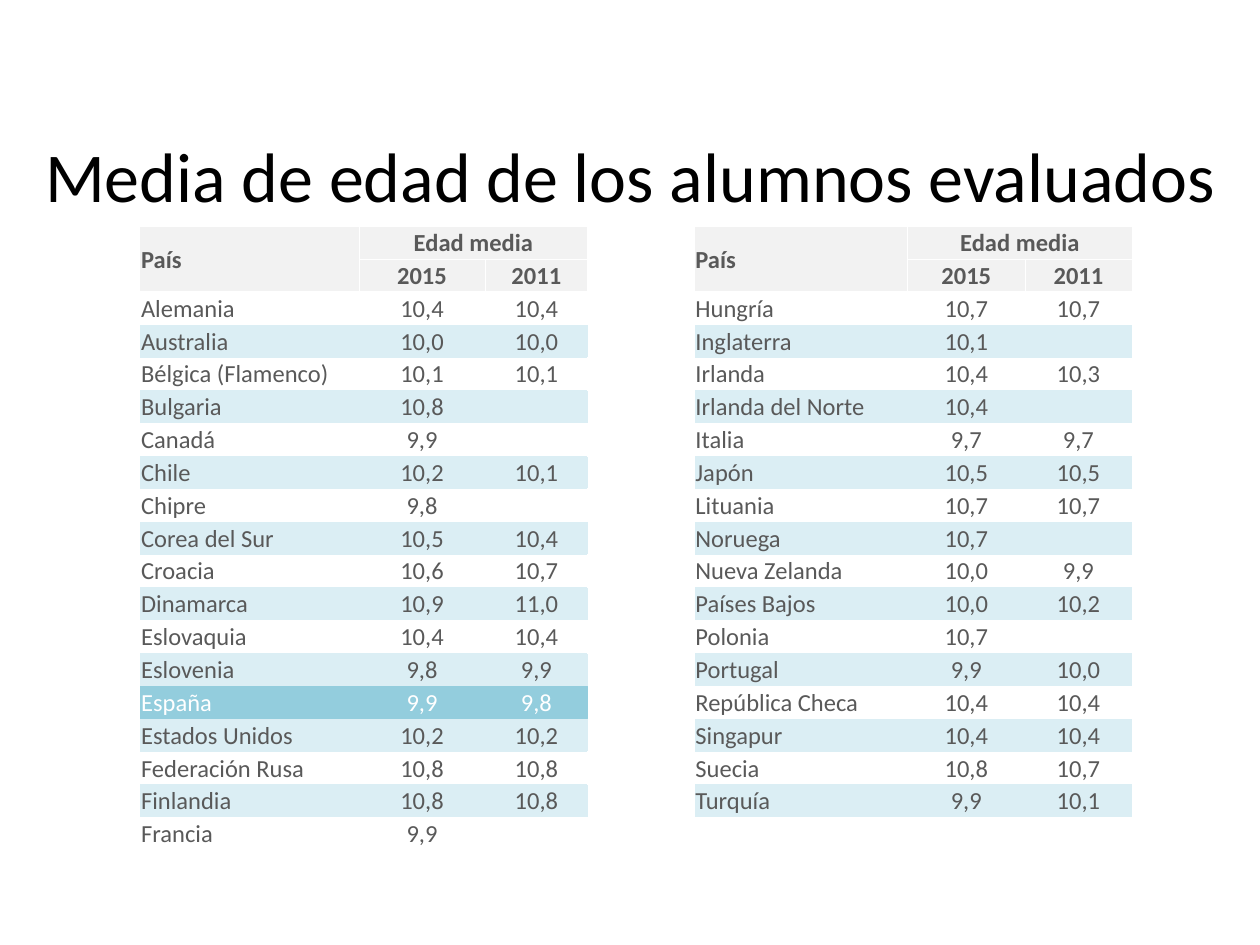
from dataclasses import dataclass
from itertools import zip_longest

from lxml.etree import SubElement
from pptx import Presentation
from pptx.dml.color import RGBColor
from pptx.enum.text import MSO_ANCHOR, PP_ALIGN
from pptx.oxml.ns import qn
from pptx.util import Inches, Pt


@dataclass(frozen=True)
class Theme:
    font: str = "Calibri"
    title_size: int = 40
    cell_size: int = 14
    black: str = "000000"
    gray: str = "595959"
    white: str = "FFFFFF"
    header: str = "F2F2F2"
    band: str = "DBEEF4"
    highlight: str = "93CDDD"
    border: float = 0.5
    plain_style: str = "{2D5ABB26-0587-4C30-8999-92F81FD0307C}"


LEFT = [
    ("Alemania", "10,4", "10,4"),
    ("Australia", "10,0", "10,0"),
    ("Bélgica (Flamenco)", "10,1", "10,1"),
    ("Bulgaria", "10,8", ""),
    ("Canadá", "9,9", ""),
    ("Chile", "10,2", "10,1"),
    ("Chipre", "9,8", ""),
    ("Corea del Sur", "10,5", "10,4"),
    ("Croacia", "10,6", "10,7"),
    ("Dinamarca", "10,9", "11,0"),
    ("Eslovaquia", "10,4", "10,4"),
    ("Eslovenia", "9,8", "9,9"),
    ("España", "9,9", "9,8"),
    ("Estados Unidos", "10,2", "10,2"),
    ("Federación Rusa", "10,8", "10,8"),
    ("Finlandia", "10,8", "10,8"),
    ("Francia", "9,9", ""),
]
RIGHT = [
    ("Hungría", "10,7", "10,7"),
    ("Inglaterra", "10,1", ""),
    ("Irlanda", "10,4", "10,3"),
    ("Irlanda del Norte", "10,4", ""),
    ("Italia", "9,7", "9,7"),
    ("Japón", "10,5", "10,5"),
    ("Lituania", "10,7", "10,7"),
    ("Noruega", "10,7", ""),
    ("Nueva Zelanda", "10,0", "9,9"),
    ("Países Bajos", "10,0", "10,2"),
    ("Polonia", "10,7", ""),
    ("Portugal", "9,9", "10,0"),
    ("República Checa", "10,4", "10,4"),
    ("Singapur", "10,4", "10,4"),
    ("Suecia", "10,8", "10,7"),
    ("Turquía", "9,9", "10,1"),
]
HEADERS = [("País", "Edad media", ""), ("", "2015", "2011")]
BLANK = ("", "", "")
COLUMNS = [17.4, 10, 8.15, 8.45, 16.95, 9.3, 8.5]
GAP = 3
HIGHLIGHTED = "España"


class SlideBuilder:
    def __init__(self, prs, theme):
        self.prs = prs
        self.theme = theme
        self.slide = prs.slides.add_slide(prs.slide_layouts[0])

    def x(self, percent):
        return round(self.prs.slide_width * percent / 100)

    def y(self, percent):
        return round(self.prs.slide_height * percent / 100)

    def run(self, p, text, size, color, bold=False):
        r = p.add_run()
        r.text = text
        r.font.name = self.theme.font
        r.font.size = Pt(size)
        r.font.bold = bold
        r.font.color.rgb = RGBColor.from_string(color)

    def title(self, text, left, top, width, height):
        sp = self.slide.shapes.title
        sp.left, sp.top = self.x(left), self.y(top)
        sp.width, sp.height = self.x(width), self.y(height)
        tf = sp.text_frame
        tf.vertical_anchor = MSO_ANCHOR.MIDDLE
        p = tf.paragraphs[0]
        p.alignment = PP_ALIGN.CENTER
        self.run(p, text, self.theme.title_size, self.theme.black)
        subtitle = self.slide.placeholders[1].element
        subtitle.getparent().remove(subtitle)

    def borders(self, cell, sides):
        tcPr = cell._tc.get_or_add_tcPr()
        for i, side in enumerate(sides):
            ln = SubElement(tcPr, qn(f"a:ln{side}"), w=str(Pt(self.theme.border)))
            fill = SubElement(ln, qn("a:solidFill"))
            SubElement(fill, qn("a:srgbClr"), val=self.theme.white)
            tcPr.insert(i, ln)

    def cell(self, cell, text, fill, sides, centered, color, bold):
        cell.margin_left = cell.margin_right = cell.margin_top = Inches(0.01)
        cell.margin_bottom = 0
        cell.vertical_anchor = MSO_ANCHOR.MIDDLE
        if fill:
            cell.fill.solid()
            cell.fill.fore_color.rgb = RGBColor.from_string(fill)
        else:
            cell.fill.background()
        self.borders(cell, sides)
        p = cell.text_frame.paragraphs[0]
        p.alignment = PP_ALIGN.CENTER if centered else PP_ALIGN.LEFT
        size = self.theme.cell_size
        if text:
            self.run(p, text, size, color, bold)
        else:
            SubElement(p._p, qn("a:endParaRPr"), sz=str(size * 100))

    def cell_look(self, row, col, highlighted):
        t = self.theme
        if col == GAP:
            return t.white, "RTB"
        if row < len(HEADERS):
            return t.header, "LRTB"
        if highlighted:
            return t.highlight, ""
        if row % 2:
            return t.band, ""
        return None, "LR"

    def age_table(self, rows, left, top, height):
        t = self.theme
        frame = self.slide.shapes.add_table(
            len(rows), len(COLUMNS), self.x(left), self.y(top),
            self.x(sum(COLUMNS)), self.y(height))
        for style in frame.element.iter(qn("a:tableStyleId")):
            style.text = t.plain_style
        table = frame.table
        table.first_row = table.horz_banding = False
        for column, width in zip(table.columns, COLUMNS):
            column.width = self.x(width)
        for i, values in enumerate(rows):
            table.rows[i].height = self.y(height / len(rows))
            for j, text in enumerate(values):
                highlighted = j < GAP and values[0] == HIGHLIGHTED
                fill, sides = self.cell_look(i, j, highlighted)
                self.cell(table.cell(i, j), text, fill, sides,
                          centered=j not in (0, GAP + 1),
                          color=t.white if highlighted else t.gray,
                          bold=i < len(HEADERS))
        for first in (0, GAP + 1):
            table.cell(0, first).merge(table.cell(1, first))
            table.cell(0, first + 1).merge(table.cell(0, first + 2))


def main():
    prs = Presentation()
    prs.slide_width, prs.slide_height = Inches(10), Inches(7.5)
    s = SlideBuilder(prs, Theme())
    pairs = zip_longest(HEADERS + LEFT, HEADERS + RIGHT, fillvalue=BLANK)
    rows = [(*a, "", *b) for a, b in pairs]
    s.age_table(rows, left=11.1, top=23.93, height=66.1)
    s.title("Media de edad de los alumnos evaluados", 0, 13.25, 100, 10.53)
    prs.save("out.pptx")


if __name__ == "__main__":
    main()
